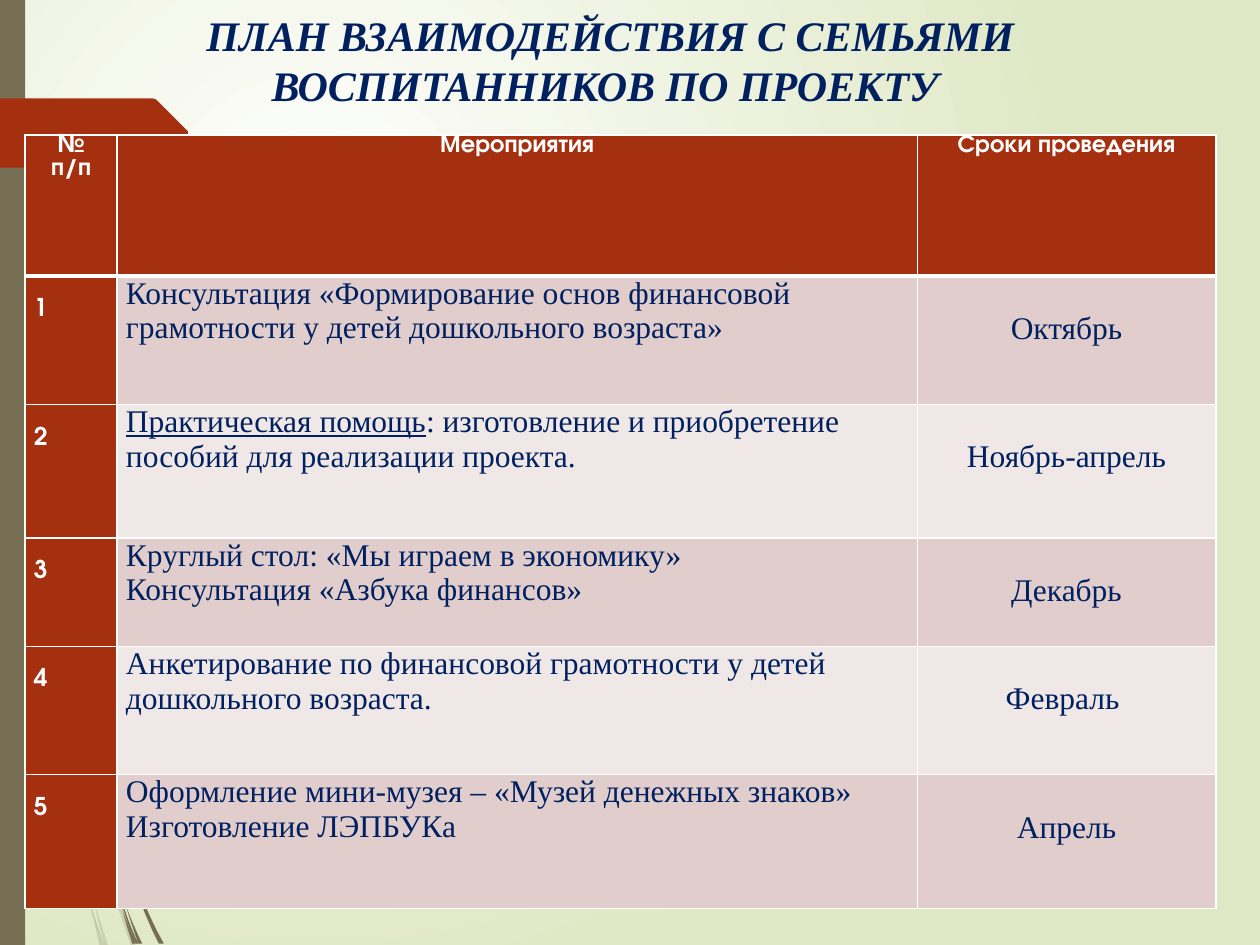
from math import pi, sin

from lxml.etree import SubElement
from pptx import Presentation
from pptx.dml.color import RGBColor
from pptx.enum.shapes import MSO_SHAPE
from pptx.enum.text import MSO_ANCHOR, PP_ALIGN
from pptx.oxml.ns import qn
from pptx.util import Emu, Pt

SCALE = 9144  # EMU in one px, 100 px to the inch
WIDE, HIGH = 1000, 750
INK = {"white": "FFFFFF", "lime": "DFE8C4", "olive": "766F54", "rust": "A53010",
       "navy": "002060", "rose": "E1CDCC", "pale": "F0E8E7"}

# Each blade of grass: start, middle and end of its left edge, then its width.
# A leaf is pointed at both ends; a root widens down to the foot of the slide.
FAINT = {
    "leaf": [((0, 282), (4, 316), (8, 350), 2),
             ((10, 345), (26, 460), (59, 599), 2),
             ((8, 350), (29, 525), (70, 714), 2),
             ((58, 599), (61, 655), (73, 711), 2),
             ((59, 586), (110, 348), (217, 153), 1),
             ((59, 586), (58, 599), (61, 610), 2)],
    "root": [((61, 596), (77, 665), (104, 751), 4),
             ((73, 711), (78, 731), (83, 751), 3),
             ((70, 714), (75, 733), (79, 751), 3),
             ((65, 683), (71, 715), (82, 751), 1)],
}
DARK = {
    "leaf": [((2, 0), (13, 240), (47, 481), 1),
             ((50, 472), (66, 560), (88, 645), 3),
             ((47, 477), (65, 600), (97, 722), 2),
             ((50, 472), (43, 310), (58, 141), 1),
             ((45, 449), (48, 477), (53, 505), 2),
             ((88, 631), (130, 474), (216, 344), 2),
             ((88, 645), (92, 683), (100, 719), 2),
             ((88, 631), (88, 643), (91, 656), 2)],
    "root": [((91, 641), (106, 700), (126, 749), 4),
             ((100, 719), (105, 735), (110, 749), 3),
             ((97, 722), (101, 736), (105, 749), 3),
             ((91, 691), (98, 722), (108, 749), 2)],
}
TAPER = {"leaf": lambda t: sin(pi * t), "root": lambda t: t}
STEPS = 8

ARROW = [(0, 78), (121, 78), (124, 79), (149, 104), (149, 107), (124, 132),
         (121, 133), (0, 133)]

TITLE = "ПЛАН ВЗАИМОДЕЙСТВИЯ С СЕМЬЯМИ ВОСПИТАННИКОВ ПО ПРОЕКТУ "
HEADS = ["№ п/п", "Мероприятия", "Сроки проведения"]
PLAN = [
    ("Консультация «Формирование основ финансовой грамотности у детей "
     "дошкольного возраста»", "Октябрь"),
    (": изготовление и приобретение пособий для реализации проекта.",
     "Ноябрь-апрель"),
    ("Круглый стол: «Мы играем в экономику»\nКонсультация «Азбука финансов»",
     "Декабрь"),
    ("Анкетирование по финансовой грамотности у детей дошкольного возраста.",
     "Февраль "),
    ("Оформление мини-музея – «Музей денежных знаков»\nИзготовление ЛЭПБУКа",
     "Апрель"),
]
LEADS = {2: "Практическая помощь"}  # underlined opening, by row
COLS = [73, 635, 237]
ROWS = [112, 102, 106, 86, 102, 106]
LABEL = {"face": "TeX Gyre Adventor", "size": 14, "ink": "white", "bold": True}


def px(num):
    return Emu(num * SCALE)


def tint(name):
    return RGBColor.from_string(INK[name])


def blade(start, mid, end, wide, kind):
    """Outline of a blade: down a parabola through three points, then back."""
    left, right = [], []
    for step in range(STEPS + 1):
        t = step / STEPS
        parts = (1 - t) * (1 - 2 * t), 4 * t * (1 - t), t * (2 * t - 1)
        x, y = (sum(p * v for p, v in zip(parts, axis))
                for axis in zip(start, mid, end))
        left.append((x, y))
        right.append((x + wide * TAPER[kind](t), y))
    return left + right[::-1]


def write(frame, text, lead="", face="Times New Roman", size=18, ink="navy",
          bold=False, slant=False, mid=False):
    """Fill a frame, one paragraph a line; lead is an underlined opening."""
    frame.word_wrap = True
    for i, line in enumerate(text.split("\n")):
        para = frame.add_paragraph() if i else frame.paragraphs[0]
        para.alignment = PP_ALIGN.CENTER if mid else PP_ALIGN.LEFT
        for part, under in ((lead if i == 0 else "", True), (line, False)):
            if part:
                run = para.add_run()
                run.text = part
                font = run.font
                font.name, font.size, font.bold = face, Pt(size), bold
                font.italic, font.underline = slant, under
                font.color.rgb = tint(ink)


class Deck:
    def __init__(self):
        self.file = Presentation()
        self.file.slide_width, self.file.slide_height = px(WIDE), px(HIGH)
        self.slide = self.file.slides.add_slide(self.file.slide_layouts[6])
        self.shapes = self.slide.shapes

    def back(self, inner, outer):
        """Round gradient centred a quarter of the way in."""
        fill = self.slide.background.fill
        fill.gradient()
        for stop, name, place in zip(fill.gradient_stops, (inner, outer), (0, 1)):
            stop.color.rgb, stop.position = tint(name), place
        line = self.slide.element.find(".//" + qn("a:lin"))
        grad = line.getparent()
        grad.remove(line)
        ring = SubElement(grad, qn("a:path"), path="circle")
        SubElement(ring, qn("a:fillToRect"), l="50000", t="50000", r="100000",
                   b="100000")

    def paint(self, shape, ink, alpha=100):
        shape.shadow.inherit = False
        shape.fill.solid()
        shape.fill.fore_color.rgb = tint(ink)
        shape.line.fill.background()
        if alpha < 100:
            tone = shape.element.spPr.find(".//" + qn("a:srgbClr"))
            SubElement(tone, qn("a:alpha"), val=str(alpha * 1000))

    def free(self, dots, ink, alpha=100, home=None):
        first, *rest = [(px(x), px(y)) for x, y in dots]
        path = (home or self.shapes).build_freeform(*first)
        path.add_line_segments(rest, close=True)
        self.paint(path.convert_to_shape(), ink, alpha)

    def grass(self, kinds, ink, alpha=100):
        home = self.shapes.add_group_shape().shapes
        for kind, blades in kinds.items():
            for form in blades:
                self.free(blade(*form, kind), ink, alpha, home)

    def bar(self, x, y, w, h, ink):
        box = self.shapes.add_shape(MSO_SHAPE.RECTANGLE, px(x), px(y), px(w), px(h))
        self.paint(box, ink)

    def title(self, x, y, w, h, text, foot):
        frame = self.shapes.add_textbox(px(x), px(y), px(w), px(h)).text_frame
        frame.vertical_anchor = MSO_ANCHOR.MIDDLE
        frame.margin_bottom = px(foot)
        write(frame, text, size=24, bold=True, slant=True, mid=True)

    def grid(self, x, y, cols, rows):
        table = self.shapes.add_table(len(rows), len(cols), px(x), px(y),
                                      px(sum(cols)), px(sum(rows))).table
        for col, wide in zip(table.columns, cols):
            col.width = px(wide)
        for row, high in zip(table.rows, rows):
            row.height = px(high)
        return table

    def cell(self, cell, text, shade, top=0, base=1, **form):
        """Style a cell; top is its upper margin, base its lower border in pt."""
        cell.margin_left = cell.margin_right = px(7)
        cell.margin_top, cell.margin_bottom = px(top), 0
        props = cell._tc.get_or_add_tcPr()
        for side, wide in zip("LRTB", (1, 1, 1, base)):
            edge = SubElement(props, qn(f"a:ln{side}"), w=str(Pt(wide)))
            fill = SubElement(edge, qn("a:solidFill"))
            SubElement(fill, qn("a:srgbClr"), val=INK["white"])
        cell.fill.solid()
        cell.fill.fore_color.rgb = tint(shade)
        write(cell.text_frame, text, **form)


def main():
    deck = Deck()
    deck.back("white", "lime")
    deck.grass(FAINT, "olive", alpha=20)
    deck.grass(DARK, "olive")
    deck.bar(0, 0, 20, HIGH, "olive")
    deck.free(ARROW, "rust")

    table = deck.grid(20, 107, COLS, ROWS)
    for col, head in enumerate(HEADS):
        deck.cell(table.cell(0, col), head, "rust", base=3, mid=True, **LABEL)
    for row, (task, date) in enumerate(PLAN, 1):
        shade = "rose" if row % 2 else "pale"
        deck.cell(table.cell(row, 0), str(row), "rust", top=18, **LABEL)
        deck.cell(table.cell(row, 1), task, shade, lead=LEADS.get(row, ""))
        deck.cell(table.cell(row, 2), date, shade, top=28, mid=True)

    deck.title(138, 2, 693, 121, TITLE, foot=35)
    deck.file.save("out.pptx")


if __name__ == "__main__":
    main()
